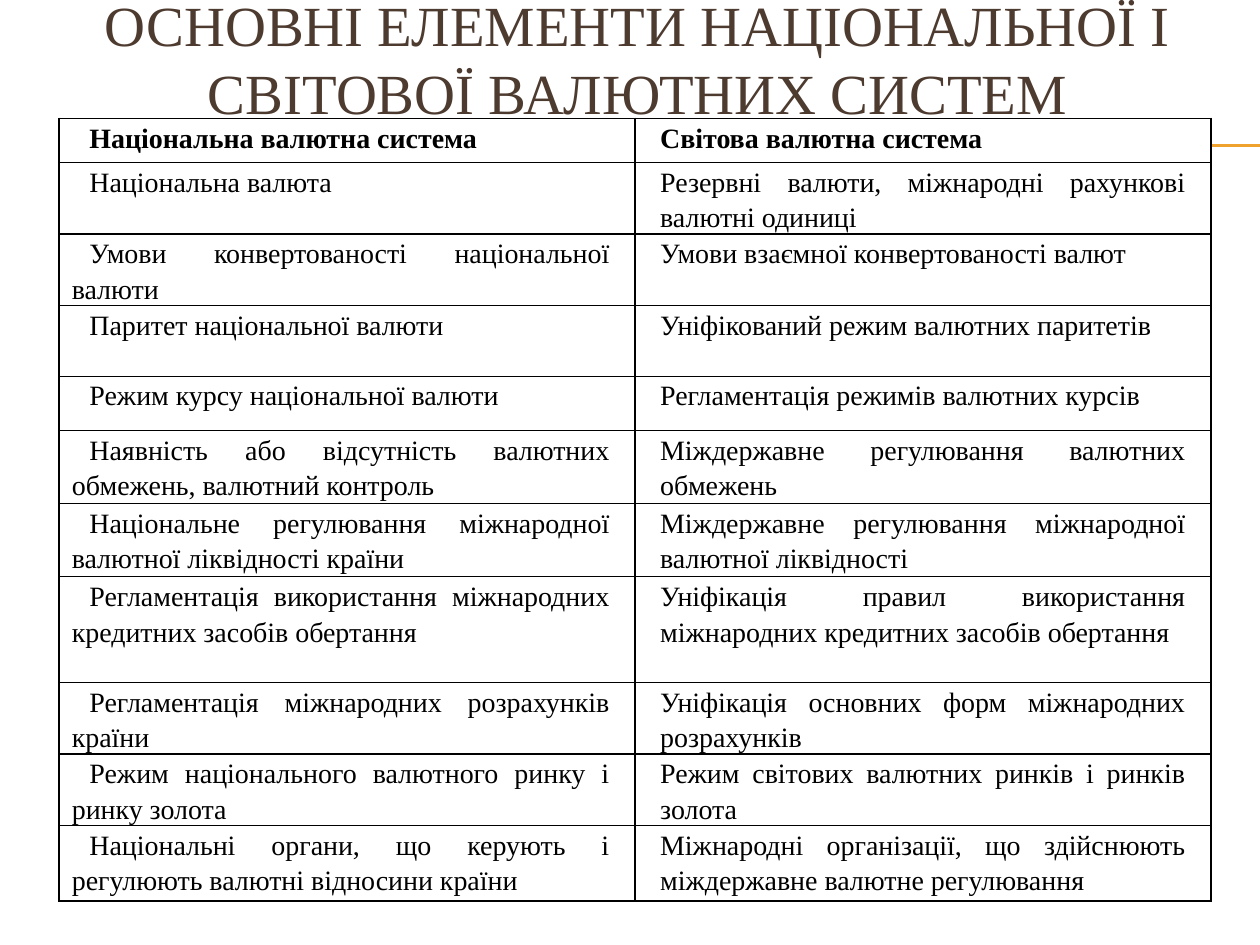
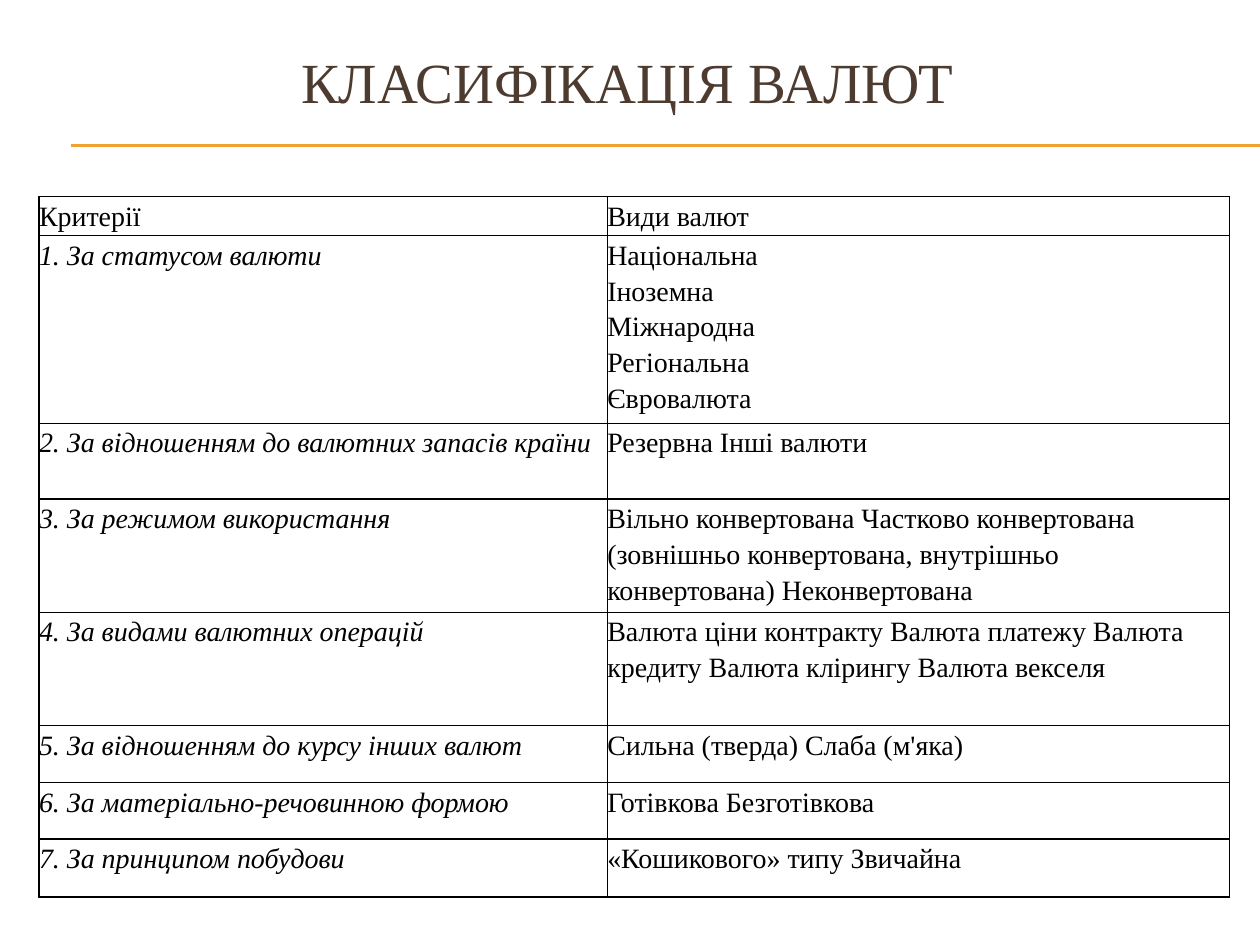
from lxml.etree import SubElement
from pptx import Presentation
from pptx.dml.color import RGBColor
from pptx.enum.shapes import MSO_CONNECTOR as Connector
from pptx.enum.text import MSO_ANCHOR as Anchor, MSO_AUTO_SIZE as AutoSize, PP_ALIGN as Align
from pptx.oxml import parse_xml
from pptx.oxml.ns import nsdecls, qn
from pptx.util import Inches, Pt

# Shared look
FONT = "Times New Roman"
BROWN, GOLD, BLACK, WHITE = "4E3B30", "F0A22E", "000000", "FFFFFF"
TITLE_SIZE, TABLE_SIZE = 32.4, 16
SLIDE_WIDTH, SLIDE_HEIGHT = Inches(10), Inches(7.5)
GRID_COLUMNS = 100  # square grid: 100 columns by 75 rows
UNIT = SLIDE_WIDTH // GRID_COLUMNS

# Paragraph settings per table column; indents in grid units
JUSTIFIED_COLUMNS = [
    dict(align=Align.JUSTIFY, left=1, first=1.4, right=2),
    dict(align=Align.JUSTIFY, left=2, first=0, right=2),
]
PLAIN_COLUMNS = [dict(align=Align.LEFT, left=0, first=0, right=0)] * 2

# Row height in grid rows, then the two cells
SYSTEM_ELEMENTS = [
    (3.5, "Національна валютна система", "Світова валютна система"),
    (5.6, "Національна валюта",
     "Резервні валюти, міжнародні рахункові валютні одиниці"),
    (5.6, "Умови конвертованості національної валюти",
     "Умови взаємної конвертованості валют"),
    (5.6, "Паритет національної валюти",
     "Уніфікований режим валютних паритетів"),
    (4.3, "Режим курсу національної валюти",
     "Регламентація режимів валютних курсів"),
    (5.8, "Наявність або відсутність валютних обмежень, валютний контроль",
     "Міждержавне регулювання валютних обмежень"),
    (5.8, "Національне регулювання міжнародної валютної ліквідності країни",
     "Міждержавне регулювання міжнародної валютної ліквідності"),
    (8.4, "Регламентація використання міжнародних кредитних засобів обертання",
     "Уніфікація правил використання міжнародних кредитних засобів обертання"),
    (5.6, "Регламентація міжнародних розрахунків країни",
     "Уніфікація основних форм міжнародних розрахунків"),
    (5.6, "Режим національного валютного ринку і ринку золота",
     "Режим світових валютних ринків і ринків золота"),
    (6, "Національні органи, що керують і регулюють валютні відносини країни",
     "Міжнародні організації, що здійснюють міждержавне валютне регулювання"),
]
CURRENCY_TYPES = [
    (3.1, "Критерії", "Види валют"),
    (14.9, "1. За статусом валюти",
     "Національна\nІноземна\nМіжнародна\nРегіональна\nЄвровалюта"),
    (6, "2. За відношенням до валютних запасів країни", "Резервна Інші валюти"),
    (9, "3. За режимом використання",
     "Вільно конвертована Частково конвертована (зовнішньо конвертована, "
     "внутрішньо конвертована) Неконвертована"),
    (9, "4. За видами валютних операцій",
     "Валюта ціни контракту Валюта платежу Валюта кредиту Валюта клірингу "
     "Валюта векселя"),
    (4.5, "5. За відношенням до курсу інших валют", "Сильна (тверда) Слаба (м'яка)"),
    (4.5, "6. За матеріально-речовинною формою", "Готівкова Безготівкова"),
    (4.6, "7. За принципом побудови", "«Кошикового» типу Звичайна"),
]


def grid(units):
    return round(units * UNIT)


def color(hex_code):
    return RGBColor.from_string(hex_code)


def add_run(paragraph, text, size, hex_code, bold=False, italic=False):
    run = paragraph.add_run()
    run.text = text
    font = run.font
    font.name, font.size, font.bold, font.italic = FONT, Pt(size), bold, italic
    font.color.rgb = color(hex_code)


def move_rules_to_layout(slide):
    """Draw the double gold rule and hand it to the layout shared by all slides."""
    layout = slide.slide_layout
    for placeholder in list(layout.placeholders):
        if placeholder.placeholder_format.idx:
            layout.shapes.element.remove(placeholder.element)
    for row in (11.5, 11.6):
        rule = slide.shapes.add_connector(
            Connector.STRAIGHT, grid(5.6), grid(row), SLIDE_WIDTH, grid(row))
        rule.line.color.rgb = color(GOLD)
        rule.line.width = Pt(0.75)
        SubElement(rule.element.spPr, qn("a:effectLst"))
        layout.shapes.element.append(rule.element)


def add_title(slide, text, left, top, height):
    title = slide.shapes.title
    title.left, title.top = grid(left), grid(top)
    title.width, title.height = grid(95), grid(height)
    frame = title.text_frame
    frame.auto_size, frame.word_wrap = AutoSize.NONE, True
    frame.vertical_anchor = Anchor.MIDDLE
    frame.margin_top = frame.margin_bottom = grid(0.5)
    paragraph = frame.paragraphs[0]
    paragraph.alignment, paragraph.line_spacing = Align.CENTER, 1.0
    add_run(paragraph, text, TITLE_SIZE, BROWN)


def set_borders(cell):
    properties = cell._tc.get_or_add_tcPr()
    for position, side in enumerate("LRTB"):
        properties.insert(position, parse_xml(
            f'<a:ln{side} {nsdecls("a")} w="{Pt(1)}"><a:solidFill>'
            f'<a:srgbClr val="{BLACK}"/></a:solidFill></a:ln{side}>'))


def fill_cell(cell, text, align, left, first, right, bold=False, italic=False):
    cell.fill.solid()
    cell.fill.fore_color.rgb = color(WHITE)
    set_borders(cell)
    cell.margin_left = cell.margin_right = cell.margin_top = cell.margin_bottom = 0
    frame = cell.text_frame
    for index, line in enumerate(text.split("\n")):
        paragraph = frame.add_paragraph() if index else frame.paragraphs[0]
        paragraph.alignment, paragraph.line_spacing = align, 1.15
        indents = paragraph._p.get_or_add_pPr()
        for name, units in (("marL", left), ("marR", right), ("indent", first)):
            indents.set(name, str(grid(units)))
        add_run(paragraph, line, TABLE_SIZE, BLACK, bold, italic)


def add_comparison(slide, rows, left, top, widths, columns,
                   bold_header=False, italic_criteria=False):
    heights = [row[0] for row in rows]
    table = slide.shapes.add_table(
        len(rows), len(widths), grid(left), grid(top),
        grid(sum(widths)), grid(sum(heights))).table
    table.first_row = table.horz_banding = False
    for column, width in zip(table.columns, widths):
        column.width = grid(width)
    for r, (height, *texts) in enumerate(rows):
        table.rows[r].height = grid(height)
        for c, text in enumerate(texts):
            fill_cell(table.cell(r, c), text, **columns[c],
                      bold=bold_header and r == 0,
                      italic=italic_criteria and r > 0 and c == 0)


def main():
    deck = Presentation()
    deck.slide_width, deck.slide_height = SLIDE_WIDTH, SLIDE_HEIGHT
    title_only = deck.slide_layouts[5]

    # Elements of the national and world currency systems
    systems = deck.slides.add_slide(title_only)
    move_rules_to_layout(systems)
    add_title(systems, "ОСНОВНІ ЕЛЕМЕНТИ НАЦІОНАЛЬНОЇ І СВІТОВОЇ ВАЛЮТНИХ СИСТЕМ",
              left=3.1, top=0, height=9.2)
    add_comparison(systems, SYSTEM_ELEMENTS, left=4.7, top=9.4, widths=(45.7, 45.7),
                   columns=JUSTIFIED_COLUMNS, bold_header=True)

    # Classification of currencies
    types_slide = deck.slides.add_slide(title_only)
    add_title(types_slide, "КЛАСИФІКАЦІЯ ВАЛЮТ", left=2.3, top=3.1, height=6.7)
    add_comparison(types_slide, CURRENCY_TYPES, left=3.1, top=15.6, widths=(45.1, 49.4),
                   columns=PLAIN_COLUMNS, italic_criteria=True)

    deck.save("out.pptx")


if __name__ == "__main__":
    main()
